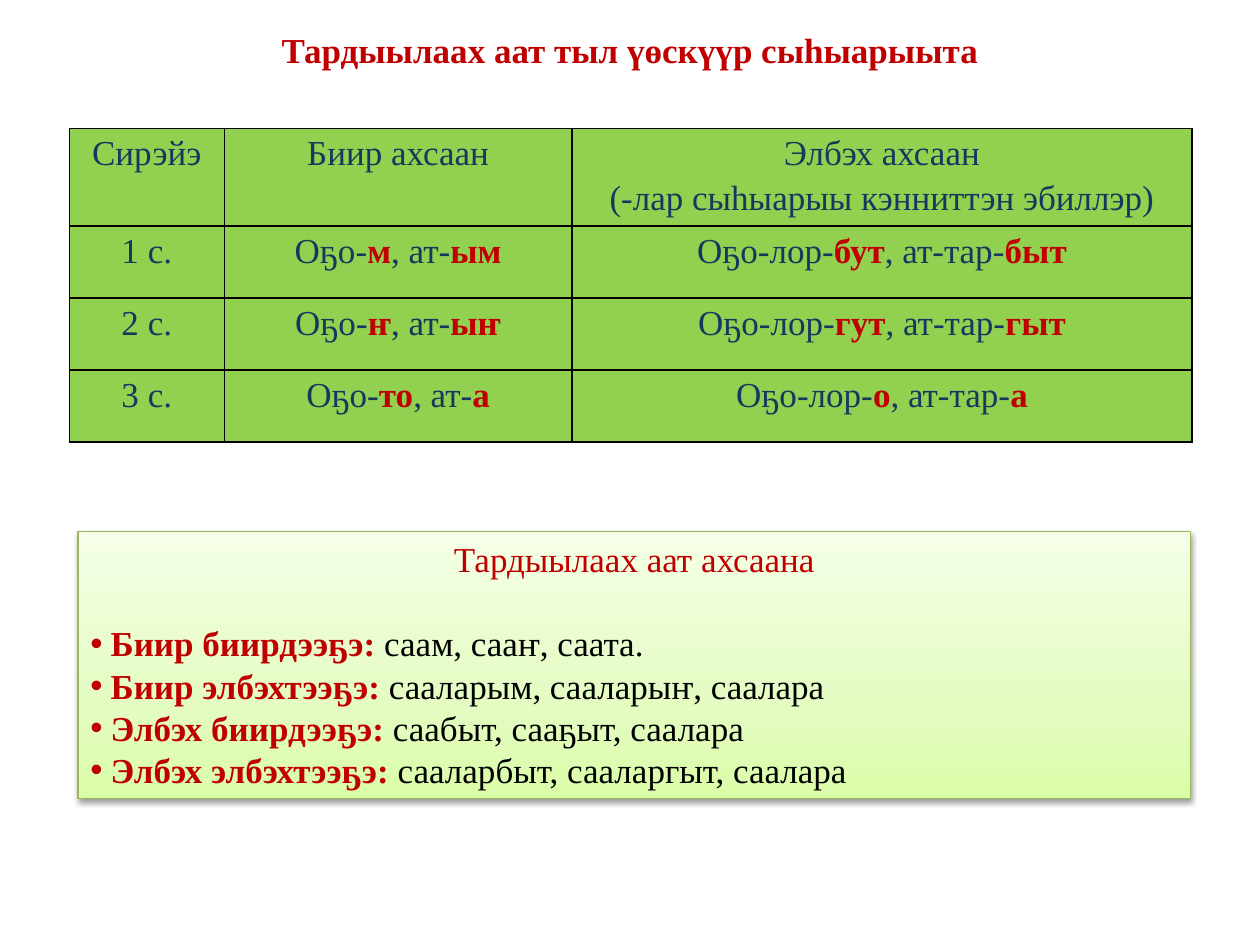
from copy import deepcopy

from lxml.etree import SubElement
from pptx import Presentation
from pptx.dml.color import RGBColor as RGB
from pptx.enum.shapes import MSO_SHAPE as Shape
from pptx.enum.text import MSO_ANCHOR as Anchor, MSO_AUTO_SIZE as AutoSize, PP_ALIGN as Align
from pptx.oxml.ns import qn
from pptx.util import Inches, Pt

RED = RGB(0xC0, 0x00, 0x00)
NAVY = RGB(0x17, 0x37, 0x5E)
BLACK = RGB(0x00, 0x00, 0x00)
GREEN = RGB(0x92, 0xD0, 0x50)
PANEL_LINE = RGB(0x98, 0xB9, 0x55)
PANEL_STOPS = [(0, RGB(0xDA, 0xFD, 0xA7)), (0.35, RGB(0xE4, 0xFC, 0xC2)),
               (1, RGB(0xF5, 0xFF, 0xE7))]
FONT = "Times New Roman"
W, H = Inches(10), Inches(7.5)

TITLE = "Тардыылаах аат тыл үөскүүр сыһыарыыта"
# Text between asterisks is bold and red
ROWS = [
    ["Сирэйэ", "Биир ахсаан", "Элбэх ахсаан\n(-лар сыһыарыы кэнниттэн эбиллэр)"],
    ["1 с.", "Оҕо-*м*, ат-*ым*", "Оҕо-лор-*бут*, ат-тар-*быт*"],
    ["2 с.", "Оҕо-*ҥ*, ат-*ыҥ*", "Оҕо-лор-*гут*, ат-тар-*гыт*"],
    ["3 с.", "Оҕо-*то*, ат-*а*", "Оҕо-лор-*о*, ат-тар-*а*"],
]
COL_WEIGHTS = [1.23, 2.76, 4.92]
ROW_WEIGHTS = [0.77, 0.57, 0.57, 0.57]
PANEL_TITLE = "Тардыылаах аат ахсаана"
PANEL_ITEMS = [
    "*Биир биирдээҕэ:* саам, сааҥ, саата.",
    "*Биир элбэхтээҕэ:* сааларым, сааларыҥ, саалара",
    "*Элбэх биирдээҕэ:* саабыт, сааҕыт, саалара",
    "*Элбэх элбэхтээҕэ:* сааларбыт, сааларгыт, саалара",
]


def area(x, y, w, h):
    """Box from percentages of the slide's size."""
    return [int(size * share / 100) for size, share in zip((W, H, W, H), (x, y, w, h))]


def write(p, text, color=BLACK, align=Align.LEFT, bold=False, spacing=None, after=0):
    p.alignment, p.line_spacing = align, spacing
    p.space_before, p.space_after = Pt(0), Pt(after)
    for i, part in enumerate(text.split("*")):
        if part:
            accent = i % 2 == 1
            r = p.add_run()
            r.text = part
            r.font.name, r.font.size = FONT, Pt(20)
            r.font.bold = bold or accent
            r.font.color.rgb = RED if accent else color


def add_bullet(p):
    pPr = p._p.get_or_add_pPr()
    pPr.set("marL", str(Inches(0.16)))
    pPr.set("indent", str(-Inches(0.16)))
    SubElement(pPr, qn("a:buFont"), typeface="Arial")
    SubElement(pPr, qn("a:buChar"), char="•")


def border_cell(cell):
    tcPr = cell._tc.get_or_add_tcPr()
    for i, side in enumerate(("lnL", "lnR", "lnT", "lnB")):
        ln = tcPr.makeelement(qn(f"a:{side}"), {"w": str(Pt(1))})
        SubElement(SubElement(ln, qn("a:solidFill")), qn("a:srgbClr"), val=str(BLACK))
        tcPr.insert(i, ln)


def add_title(s, box):
    title = s.shapes.title
    title.left, title.top, title.width, title.height = box
    tf = title.text_frame
    tf.auto_size, tf.vertical_anchor = AutoSize.NONE, Anchor.TOP
    tf.margin_top = Inches(0.07)
    write(tf.paragraphs[0], TITLE, color=RED, align=Align.CENTER, bold=True)


def add_suffix_table(s, box):
    x, y, w, h = box
    table = s.shapes.add_table(len(ROWS), len(COL_WEIGHTS), x, y, w, h).table
    for col, weight in zip(table.columns, COL_WEIGHTS):
        col.width = int(w * weight / sum(COL_WEIGHTS))
    for row, weight, texts in zip(table.rows, ROW_WEIGHTS, ROWS):
        row.height = int(h * weight / sum(ROW_WEIGHTS))
        for cell, text in zip(row.cells, texts):
            cell.fill.solid()
            cell.fill.fore_color.rgb = GREEN
            cell.margin_left = cell.margin_right = Inches(0.05)
            cell.margin_top = cell.margin_bottom = 0
            border_cell(cell)
            tf = cell.text_frame
            for i, line in enumerate(text.split("\n")):
                p = tf.add_paragraph() if i else tf.paragraphs[0]
                write(p, line, color=NAVY, align=Align.CENTER, spacing=1.15)


def style_panel(sp):
    # Three-stop gradient, lightest at the top
    sp.fill.gradient()
    sp.fill.gradient_angle = 90
    stops = sp._element.spPr.find(".//" + qn("a:gsLst"))
    stops.append(deepcopy(stops[0]))
    for stop, (position, color) in zip(sp.fill.gradient_stops, PANEL_STOPS):
        stop.position, stop.color.rgb = position, color
    sp.line.color.rgb, sp.line.width = PANEL_LINE, Pt(0.75)
    # Soft shadow below
    sp.shadow.inherit = False
    effects = sp._element.spPr.find(qn("a:effectLst"))
    shadow = SubElement(effects, qn("a:outerShdw"), blurRad=str(Pt(3.1)),
                        dist=str(Pt(1.6)), dir="5400000", rotWithShape="0")
    color = SubElement(shadow, qn("a:srgbClr"), val=str(BLACK))
    SubElement(color, qn("a:alpha"), val="38000")


def add_number_panel(s, box):
    sp = s.shapes.add_shape(Shape.RECTANGLE, *box)
    style_panel(sp)
    tf = sp.text_frame
    tf.word_wrap, tf.vertical_anchor = True, Anchor.TOP
    write(tf.paragraphs[0], PANEL_TITLE, color=RED, align=Align.CENTER, after=24)
    for item in PANEL_ITEMS:
        p = tf.add_paragraph()
        write(p, item)
        add_bullet(p)


def main():
    prs = Presentation()
    prs.slide_width, prs.slide_height = W, H
    s = prs.slides.add_slide(prs.slide_layouts[5])
    add_title(s, area(0, 2.13, 100, 14.8))
    add_suffix_table(s, area(5.5, 13.6, 89.1, 33.2))
    add_number_panel(s, area(6.2, 56.27, 88.3, 28.27))
    prs.save("out.pptx")


if __name__ == "__main__":
    main()
